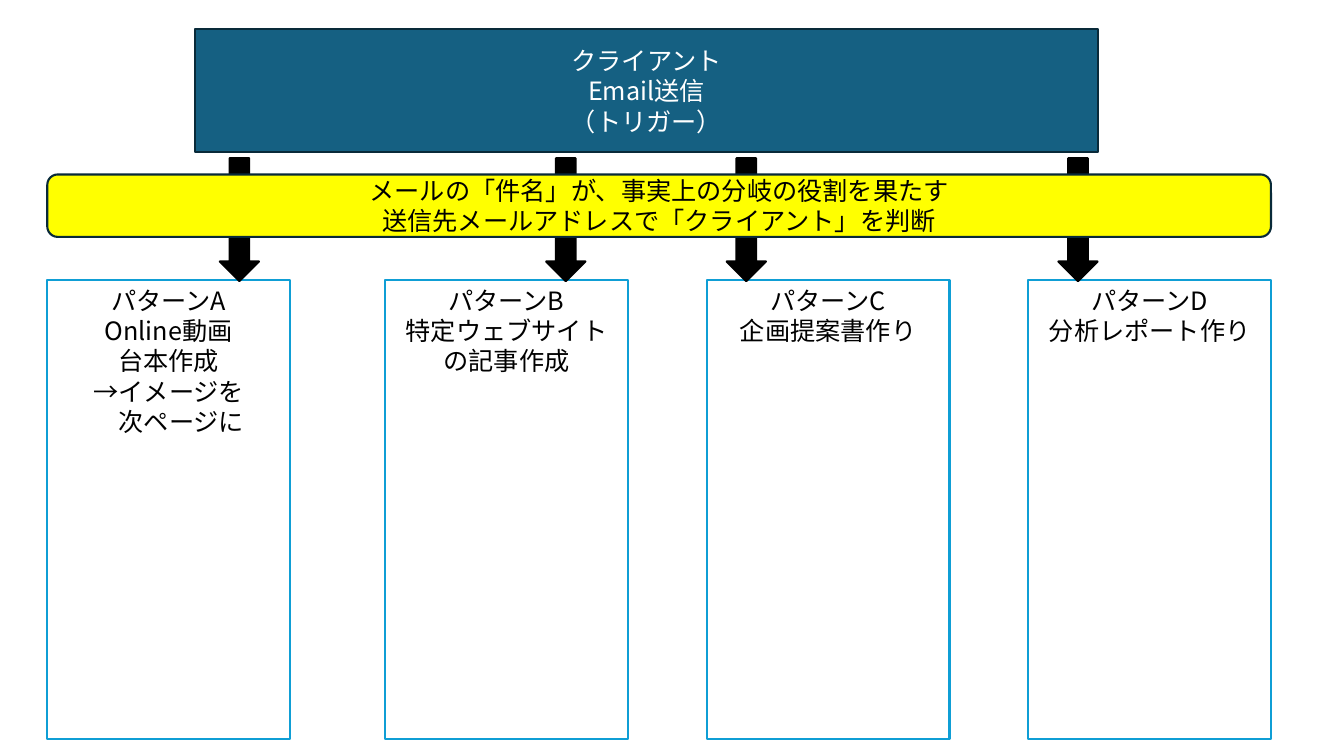
import pptx
import pptx.util
import pptx.dml.color
import pptx.enum.shapes
import pptx.enum.text
from lxml import etree

Pt = pptx.util.Pt
RGBColor = pptx.dml.color.RGBColor
SHAPE = pptx.enum.shapes.MSO_SHAPE
ANCHOR = pptx.enum.text.MSO_ANCHOR

WHITE = RGBColor(0xFF, 0xFF, 0xFF)
BLACK = RGBColor(0x00, 0x00, 0x00)
YELLOW = RGBColor(0xFF, 0xFF, 0x00)
TEAL = RGBColor(0x15, 0x60, 0x82)
NAVY = RGBColor(0x09, 0x2A, 0x39)
BLUE = RGBColor(0x0F, 0x9E, 0xD5)
FONT = "Noto Sans CJK JP"


def add_block(kind, left, top, width, height, fill, line):
    s = slide.shapes.add_shape(kind, Pt(left), Pt(top), Pt(width), Pt(height))
    s.shadow.inherit = False
    s.fill.solid()
    s.fill.fore_color.rgb = fill
    s.line.color.rgb = line
    s.line.width = Pt(1.5)
    return s


def write_lines(s, lines, color, anchor=ANCHOR.MIDDLE):
    tf = s.text_frame
    tf.word_wrap = True
    tf.vertical_anchor = anchor
    tf.text = "\n".join(lines)
    for p in tf.paragraphs:
        p.alignment = pptx.enum.text.PP_ALIGN.CENTER
        p.line_spacing = Pt(21.6)
        p.font.size = Pt(18)
        p.font.name = FONT
        p.font.color.rgb = color
        east_asian = etree.SubElement(p.font._element, pptx.oxml.ns.qn("a:ea"))
        east_asian.set("typeface", FONT)


prs = pptx.Presentation()
prs.slide_width, prs.slide_height = Pt(960), Pt(540)
slide = prs.slides.add_slide(prs.slide_layouts[6])

trigger = add_block(SHAPE.RECTANGLE, 139.3, 20.9, 645.1, 88, TEAL, NAVY)
write_lines(trigger, ["クライアント", "Email送信", "（トリガー）"], WHITE)

patterns = [
    (33.8, 157, ["パターンA", "Online動画", "台本作成", "→イメージを", "　次ページに"]),
    (275, 390.2, ["パターンB", "特定ウェブサイトの記事作成"]),
    (504.7, 519.1, ["パターンC", "企画提案書作り"]),
    (734.4, 756, ["パターンD", "分析レポート作り"]),
]
for box_left, arrow_left, lines in patterns:
    box = add_block(SHAPE.RECTANGLE, box_left, 200.2, 173.5, 327.8, WHITE, BLUE)
    write_lines(box, lines, BLACK, ANCHOR.TOP)
    add_block(SHAPE.DOWN_ARROW, arrow_left, 113, 28, 87.8, BLACK, BLACK)

branch = add_block(SHAPE.ROUNDED_RECTANGLE, 33.8, 124.6, 874.1, 44.6, YELLOW, NAVY)
write_lines(branch, ["メールの「件名」が、事実上の分岐の役割を果たす",
                     "送信先メールアドレスで「クライアント」を判断"], BLACK)

prs.save("out.pptx")
